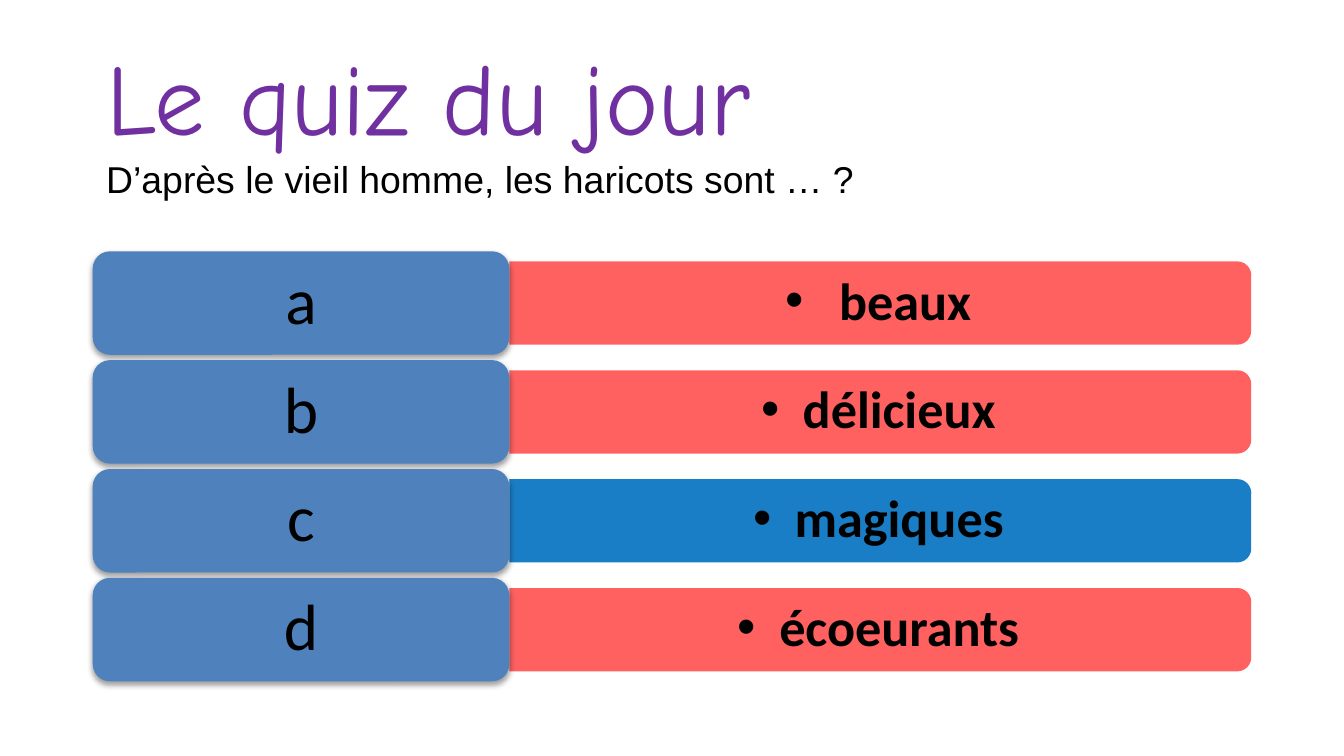
from lxml.etree import SubElement
from pptx import Presentation
from pptx.dml.color import RGBColor
from pptx.enum.shapes import MSO_SHAPE
from pptx.enum.text import MSO_ANCHOR, MSO_AUTO_SIZE, PP_ALIGN
from pptx.oxml.ns import qn
from pptx.util import Inches, Pt

COLORS = {
    "title": "7030A0",
    "text": "000000",
    "label": "4F81BD",
    "wrong": "FF5050",
    "right": "0070C0",
}
ANSWERS = [
    ("a", " beaux", "wrong"),
    ("b", "délicieux", "wrong"),
    ("c", "magiques", "right"),
    ("d", "écoeurants", "wrong"),
]
SLIDE_WIDTH = 10
LEFT, TOP, PITCH = 0.69, 1.87, 0.81
LABEL_WIDTH, LABEL_HEIGHT = 3.1, 0.77
BAR_WIDTH, BAR_HEIGHT = 5.52, 0.62


def add_text(paragraph, text, size, font="Calibri", color="text", bold=False):
    run = paragraph.add_run()
    run.text = text
    run.font.size = Pt(size)
    run.font.name = font
    run.font.bold = bold
    run.font.color.rgb = RGBColor.from_string(COLORS[color])


def center_paragraph(frame, space_after):
    frame.word_wrap = True
    frame.vertical_anchor = MSO_ANCHOR.MIDDLE
    paragraph = frame.paragraphs[0]
    paragraph.alignment = PP_ALIGN.CENTER
    paragraph.line_spacing = 0.9
    paragraph.space_after = Pt(space_after)
    return paragraph


def add_block(slide, kind, left, top, width, height, color):
    shape = slide.shapes.add_shape(
        kind, Inches(left), Inches(top), Inches(width), Inches(height)
    )
    shape.shadow.inherit = False
    shape.fill.solid()
    shape.fill.fore_color.rgb = RGBColor.from_string(COLORS[color])
    shape.line.fill.background()
    return shape


def add_alpha(color_element, percent):
    SubElement(color_element, qn("a:alpha"), val=str(percent * 1000))


def add_shadow(shape):
    effects = shape._element.spPr.find(qn("a:effectLst"))
    shadow = SubElement(
        effects, qn("a:outerShdw"), blurRad=str(Pt(3.1)), dist=str(Pt(1.6)),
        dir="5400000", rotWithShape="0",
    )
    add_alpha(SubElement(shadow, qn("a:srgbClr"), val=COLORS["text"]), 38)


def add_bullet(paragraph):
    paragraph.level = 1
    properties = paragraph._p.get_or_add_pPr()
    properties.set("marL", str(Inches(0.31)))
    properties.set("indent", str(Inches(-0.31)))
    SubElement(properties, qn("a:buFont"), typeface="Arial")
    SubElement(properties, qn("a:buChar"), char="•")


def add_answer_bar(slide, top, answer, color):
    left = LEFT + LABEL_WIDTH
    bar = add_block(
        slide, MSO_SHAPE.ROUND_2_SAME_RECTANGLE,
        left + (BAR_WIDTH - BAR_HEIGHT) / 2, top + (BAR_HEIGHT - BAR_WIDTH) / 2,
        BAR_HEIGHT, BAR_WIDTH, color,
    )
    bar.rotation = 90
    add_alpha(bar._element.spPr.find(qn("a:solidFill"))[0], 90)

    box = slide.shapes.add_textbox(
        Inches(left), Inches(top + 0.03), Inches(5.49), Inches(0.56)
    )
    frame = box.text_frame
    frame.margin_left = frame.margin_right = Inches(0.12)
    frame.margin_top = frame.margin_bottom = Inches(0.06)
    paragraph = center_paragraph(frame, 4.2)
    add_bullet(paragraph)
    add_text(paragraph, answer, 28, bold=True)


def add_label(slide, top, letter):
    label = add_block(
        slide, MSO_SHAPE.ROUNDED_RECTANGLE, LEFT, top, LABEL_WIDTH, LABEL_HEIGHT, "label"
    )
    add_shadow(label)
    add_text(center_paragraph(label.text_frame, 12.25), letter, 35)


def fill_title(slide):
    title = slide.shapes.title
    title.left, title.top = Inches(LEFT), Inches(0.2)
    title.width, title.height = Inches(8.62), Inches(1.35)
    frame = title.text_frame
    frame.auto_size = MSO_AUTO_SIZE.NONE
    frame.vertical_anchor = MSO_ANCHOR.MIDDLE
    paragraph = frame.paragraphs[0]
    paragraph.alignment = PP_ALIGN.LEFT
    add_text(paragraph, "Le quiz du jour", 54, font="Comic Neue", color="title")
    paragraph.add_line_break()
    add_text(paragraph, "D’après le vieil homme, les haricots sont … ?", 20, font="Arial")


def main():
    presentation = Presentation()
    presentation.slide_width = Inches(SLIDE_WIDTH)
    presentation.slide_height = Inches(SLIDE_WIDTH * 9 / 16)
    slide = presentation.slides.add_slide(presentation.slide_layouts[5])
    fill_title(slide)
    for row, (letter, answer, color) in enumerate(ANSWERS):
        top = TOP + row * PITCH
        add_answer_bar(slide, top + (LABEL_HEIGHT - BAR_HEIGHT) / 2, answer, color)
        add_label(slide, top, letter)
    presentation.save("out.pptx")


if __name__ == "__main__":
    main()
